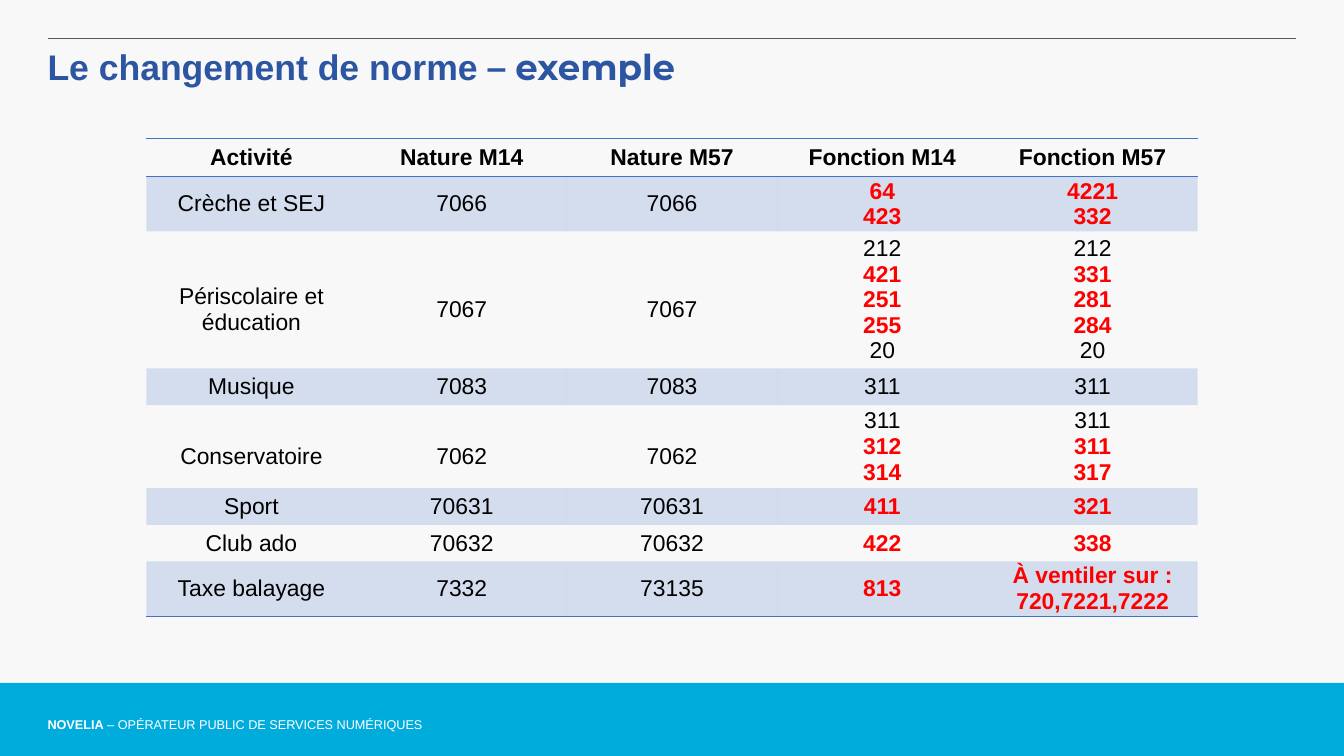
import itertools
import pptx
import pptx.util
import pptx.dml.color
import pptx.enum.shapes
import pptx.enum.text
import pptx.oxml
import pptx.oxml.ns

Inches, Pt = pptx.util.Inches, pptx.util.Pt
CENTER = pptx.enum.text.PP_ALIGN.CENTER
MIDDLE = pptx.enum.text.MSO_ANCHOR.MIDDLE
qn = pptx.oxml.ns.qn

theme = {
    "back": "F8F8F8", "band": "00ACDC", "rule": "58595B", "title": "2C55A2",
    "grid": "4472C4", "text": "000000", "change": "FF0000", "light": "FFFFFF",
    "font": "Arial", "accent": "Montserrat",
    "title size": 28, "cell size": 18, "foot size": 10,
}


def color(name):
    return pptx.dml.color.RGBColor.from_string(theme[name])


def style(font, size, tint, bold):
    font.name = theme["font"]
    font.size = Pt(theme[size])
    font.color.rgb = color(tint)
    font.bold = bold


deck = pptx.Presentation()
deck.slide_width, deck.slide_height = Inches(14.7), Inches(8.27)
slide = deck.slides.add_slide(deck.slide_layouts[5])
slide.background.fill.solid()
slide.background.fill.fore_color.rgb = color("back")
shapes = slide.shapes
edge = Inches(0.52)

# Footer band
band_high = Inches(0.8)
band = shapes.add_shape(pptx.enum.shapes.MSO_SHAPE.RECTANGLE, 0,
                        deck.slide_height - band_high, deck.slide_width, band_high)
band.shadow.inherit = False
band.fill.solid()
band.fill.fore_color.rgb = color("band")
band.line.fill.background()

# Top rule
rule = shapes.add_connector(pptx.enum.shapes.MSO_CONNECTOR.STRAIGHT,
                            edge, Inches(0.42), deck.slide_width - edge, Inches(0.42))
rule.line.color.rgb = color("rule")
rule.line.width = Pt(0.75)
rule._element.spPr.append(pptx.oxml.parse_xml(
    f'<a:effectLst {pptx.oxml.ns.nsdecls("a")}/>'))

# Footer text
foot = shapes.add_textbox(edge, Inches(7.82), Inches(6.26), Inches(0.19)).text_frame
foot.word_wrap = True
foot.margin_left = foot.margin_right = foot.margin_top = foot.margin_bottom = 0
line = foot.paragraphs[0]
line.line_spacing = 1.11
style(line.font, "foot size", "light", False)
name = line.add_run()
name.text = "NOVELIA"
name.font.bold = True
line.add_run().text = " – OPÉRATEUR PUBLIC DE SERVICES NUMÉRIQUES"

# Title
title = shapes.title
title.left, title.top = Inches(0.42), Inches(0.44)
title.width, title.height = Inches(13.56), Inches(0.57)
frame = title.text_frame
frame.auto_size = pptx.enum.text.MSO_AUTO_SIZE.NONE
frame.vertical_anchor = pptx.enum.text.MSO_ANCHOR.TOP
line = frame.paragraphs[0]
line.alignment = pptx.enum.text.PP_ALIGN.LEFT
style(line.font, "title size", "title", True)
line.add_run().text = "Le changement de norme"
tail = line.add_run()
tail.text = " – exemple"
tail.font.name = theme["accent"]

# Rows: activity, nature M14, nature M57, functions M14, functions M57, height
head = ["Activité", "Nature M14", "Nature M57", "Fonction M14", "Fonction M57"]
rows = [
    ("Crèche et SEJ", "7066", "7066", ["64", "423"], ["4221", "332"], 0.6),
    ("Périscolaire et éducation", "7067", "7067", ["212", "421", "251", "255", "20"],
     ["212", "331", "281", "284", "20"], 1.49),
    ("Musique", "7083", "7083", ["311"], ["311"], 0.4),
    ("Conservatoire", "7062", "7062", ["311", "312", "314"], ["311", "311", "317"], 0.91),
    ("Sport", "70631", "70631", ["411"], ["321"], 0.4),
    ("Club ado", "70632", "70632", ["422"], ["338"], 0.4),
    ("Taxe balayage", "7332", "73135", ["813"], ["À ventiler sur :", "720,7221,7222"], 0.6),
]
cells = [[[text] for text in head]]
cells += [[[act], [old], [new], past, now] for act, old, new, past, now, high in rows]
highs = [0.41] + [row[-1] for row in rows]

# Table
table = shapes.add_table(len(cells), len(head), Inches(1.6), Inches(1.52),
                         Inches(11.5), Inches(sum(highs))).table
table.first_row = table.horz_banding = False
plain = "{2D5ABB26-0587-4C30-8999-92F81FD0307C}"
table._tbl.tblPr.find(qn("a:tableStyleId")).text = plain

for r, (row, high) in enumerate(zip(cells, highs)):
    table.rows[r].height = Inches(high)
    # A function code is red when it differs between the two norms
    moved = [a != b for a, b in itertools.zip_longest(row[3], row[4])]
    for c, lines in enumerate(row):
        cell = table.cell(r, c)
        cell.margin_left = cell.margin_right = cell.margin_top = cell.margin_bottom = 0
        if c < 3 and r in (2, 4):
            cell.margin_top = Inches(0.21)
        cell.vertical_anchor = MIDDLE
        cell.text = "\n".join(lines)
        for line, shift in zip(cell.text_frame.paragraphs, moved):
            red = r > 0 and c > 2 and shift
            line.alignment = CENTER
            style(line.font, "cell size", "change" if red else "text", red or r == 0)

        # Borders, then the tint of every other row
        props = cell._tc.get_or_add_tcPr()
        for side in {0: ["lnT", "lnB"], len(rows): ["lnB"]}.get(r, []):
            props.append(pptx.oxml.parse_xml(
                f'<a:{side} {pptx.oxml.ns.nsdecls("a")} w="12700"><a:solidFill>'
                f'<a:srgbClr val="{theme["grid"]}"/></a:solidFill></a:{side}>'))
        if r % 2:
            cell.fill.solid()
            cell.fill.fore_color.rgb = color("grid")
            tint = props.find(qn("a:solidFill"))[0]
            tint.append(pptx.oxml.parse_xml(
                f'<a:alpha {pptx.oxml.ns.nsdecls("a")} val="20000"/>'))
        else:
            cell.fill.background()

deck.save("out.pptx")
